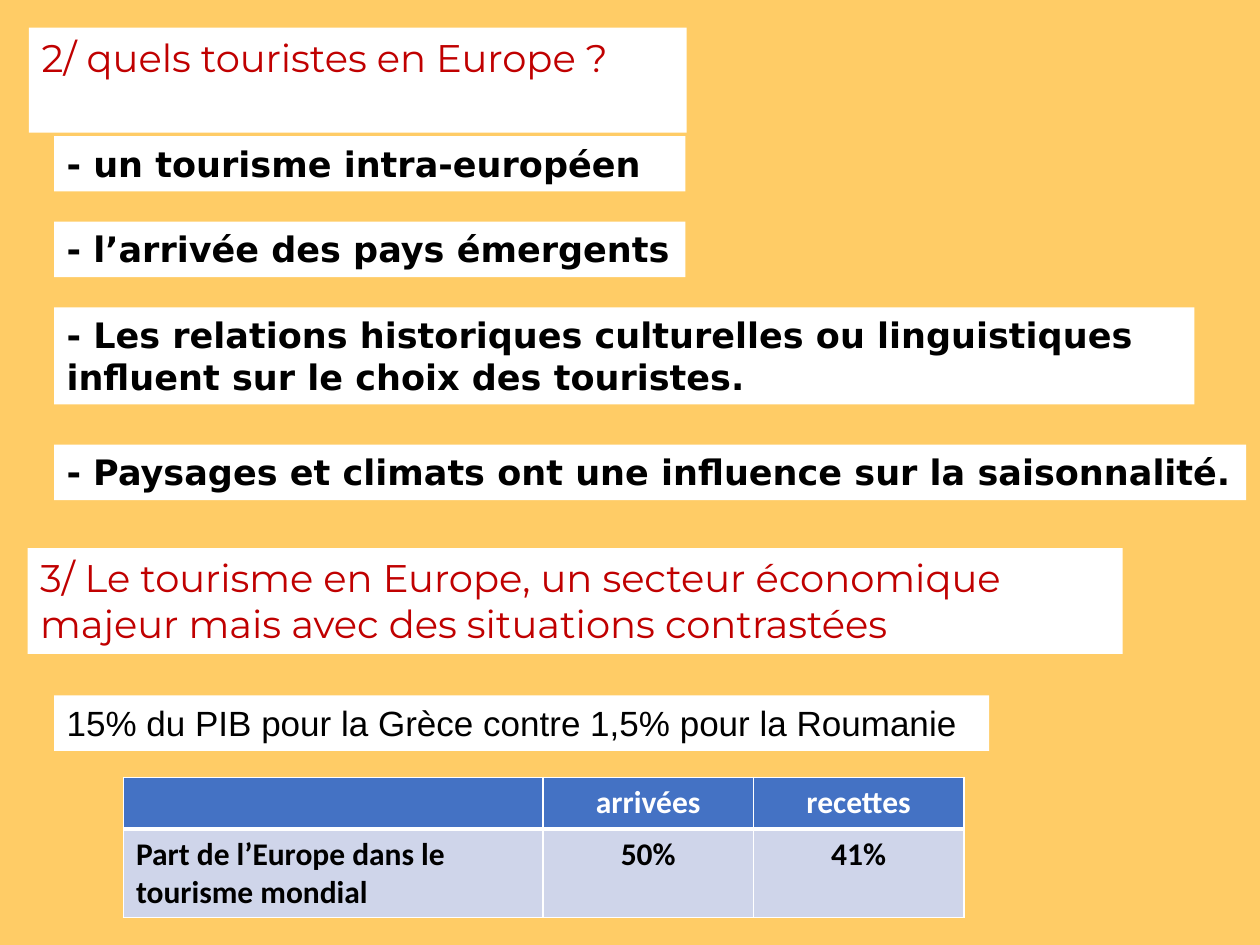
from dataclasses import dataclass

from lxml.etree import SubElement
from pptx import Presentation
from pptx.dml.color import RGBColor
from pptx.enum.text import MSO_ANCHOR, MSO_AUTO_SIZE, PP_ALIGN
from pptx.oxml.ns import qn
from pptx.util import Inches, Pt

COLORS = {
    "back": "FFCC66",
    "white": "FFFFFF",
    "red": "C00000",
    "black": "000000",
    "head": "4472C4",
    "row": "CFD5EA",
}


@dataclass(frozen=True)
class Style:
    font: str
    size: int
    color: str
    bold: bool = False


@dataclass(frozen=True)
class Box:
    text: str
    left: float
    top: float
    width: float
    height: float
    style: Style


HEAD = Style("Montserrat", 22, "red")
POINT = Style("DejaVu Sans", 20, "black", True)
FACT = Style("Arial", 20, "black")
LABEL = Style("Calibri", 18, "white", True)
CELL = Style("Calibri", 18, "black", True)

TITLE = Box("2/ quels touristes en Europe ?", 0.23, 0.22, 5.22, 0.47, HEAD)
BOXES = [
    Box("- un tourisme intra-européen", 0.43, 1.08, 5.01, 0.44, POINT),
    Box("- l’arrivée des pays émergents", 0.43, 1.76, 5.01, 0.44, POINT),
    Box("- Les relations historiques culturelles ou linguistiques "
        "influent sur le choix des touristes.", 0.43, 2.44, 9.05, 0.77, POINT),
    Box("- Paysages et climats ont une influence sur la saisonnalité.",
        0.43, 3.53, 9.46, 0.44, POINT),
    Box("3/ Le tourisme en Europe, un secteur économique majeur mais avec "
        "des situations contrastées", 0.22, 4.35, 8.69, 0.84, HEAD),
    Box("15% du PIB pour la Grèce contre 1,5% pour la Roumanie",
        0.43, 5.52, 7.42, 0.44, FACT),
]
ROWS = [
    ["", "arrivées", "recettes"],
    ["Part de l’Europe dans le tourisme mondial", "50%", "41%"],
]
WIDTHS = [3.33, 1.67, 1.67]
HEIGHTS = [0.41, 0.7]


def rgb(name: str) -> RGBColor:
    return RGBColor.from_string(COLORS[name])


def paint(part, name: str) -> None:
    part.fill.solid()
    part.fill.fore_color.rgb = rgb(name)


def write(frame, text: str, style: Style, align=PP_ALIGN.LEFT) -> None:
    para = frame.paragraphs[0]
    para.alignment = align
    run = para.add_run()
    run.text = text
    font = run.font
    font.name, font.size, font.bold = style.font, Pt(style.size), style.bold
    font.color.rgb = rgb(style.color)


def fill_box(shape, box: Box) -> None:
    shape.left, shape.top = Inches(box.left), Inches(box.top)
    shape.width, shape.height = Inches(box.width), Inches(box.height)
    paint(shape, "white")
    frame = shape.text_frame
    frame.word_wrap = True
    frame.auto_size = MSO_AUTO_SIZE.SHAPE_TO_FIT_TEXT
    frame.vertical_anchor = MSO_ANCHOR.TOP
    write(frame, box.text, box.style)


def edge(cell, side: str, width: float) -> None:
    line = SubElement(cell._tc.get_or_add_tcPr(), qn(f"a:ln{side}"),
                      w=str(Pt(width)))
    fill = SubElement(line, qn("a:solidFill"))
    SubElement(fill, qn("a:srgbClr"), val=COLORS["white"])


def add_grid(slide) -> None:
    table = slide.shapes.add_table(
        len(ROWS), len(WIDTHS), Inches(0.98), Inches(6.17),
        Inches(sum(WIDTHS)), Inches(sum(HEIGHTS))).table
    for col, width in zip(table.columns, WIDTHS):
        col.width = Inches(width)
    for r, row in enumerate(ROWS):
        table.rows[r].height = Inches(HEIGHTS[r])
        for c, text in enumerate(row):
            cell = table.cell(r, c)
            # Thick rule between the header and the row below
            thick = "T" if r else "B"
            for side in "LRTB":
                edge(cell, side, 3 if side == thick else 1)
            paint(cell, "row" if r else "head")
            if text:
                write(cell.text_frame, text, CELL if r else LABEL,
                      PP_ALIGN.CENTER if c else PP_ALIGN.LEFT)


def main() -> None:
    deck = Presentation()
    deck.slide_width, deck.slide_height = Inches(10), Inches(7.5)
    slide = deck.slides.add_slide(deck.slide_layouts[5])
    paint(slide.background, "back")

    # Headings and points
    fill_box(slide.shapes.title, TITLE)
    for box in BOXES:
        fill_box(slide.shapes.add_textbox(0, 0, 0, 0), box)

    # Share of world tourism
    add_grid(slide)
    deck.save("out.pptx")


if __name__ == "__main__":
    main()
